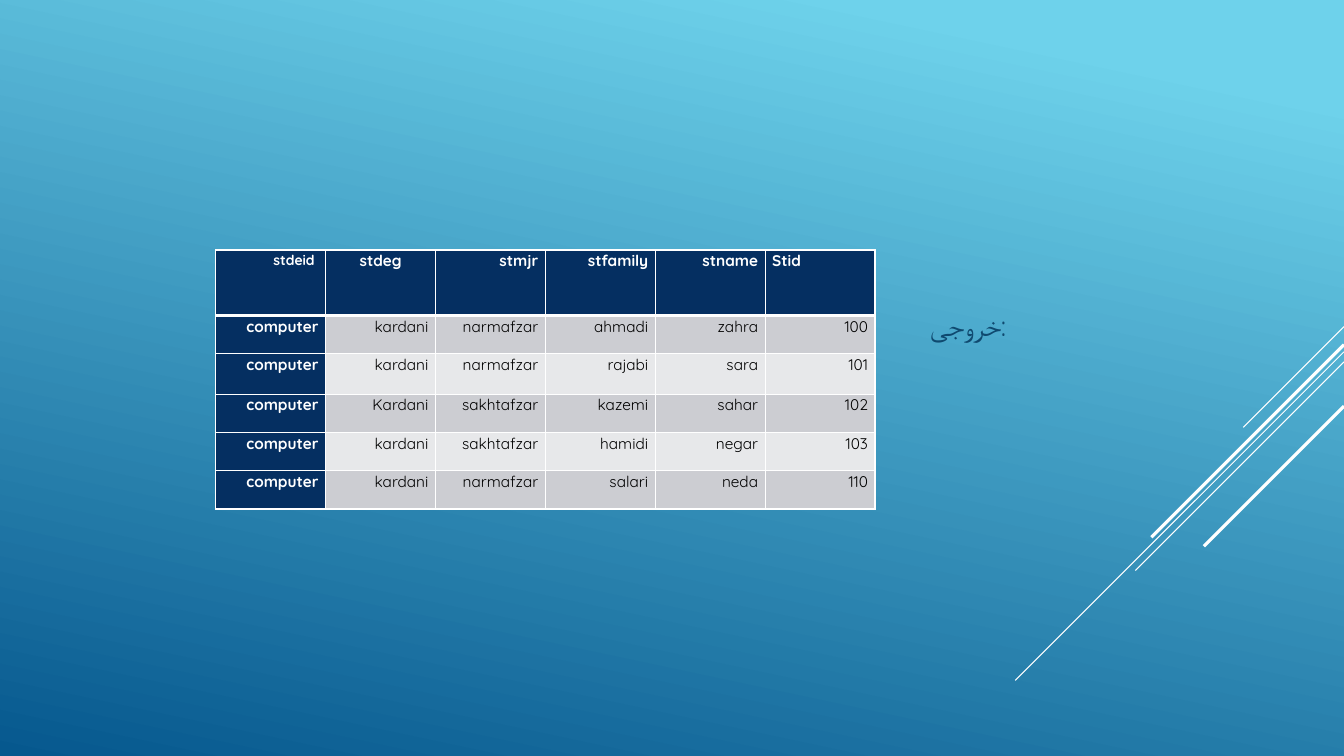
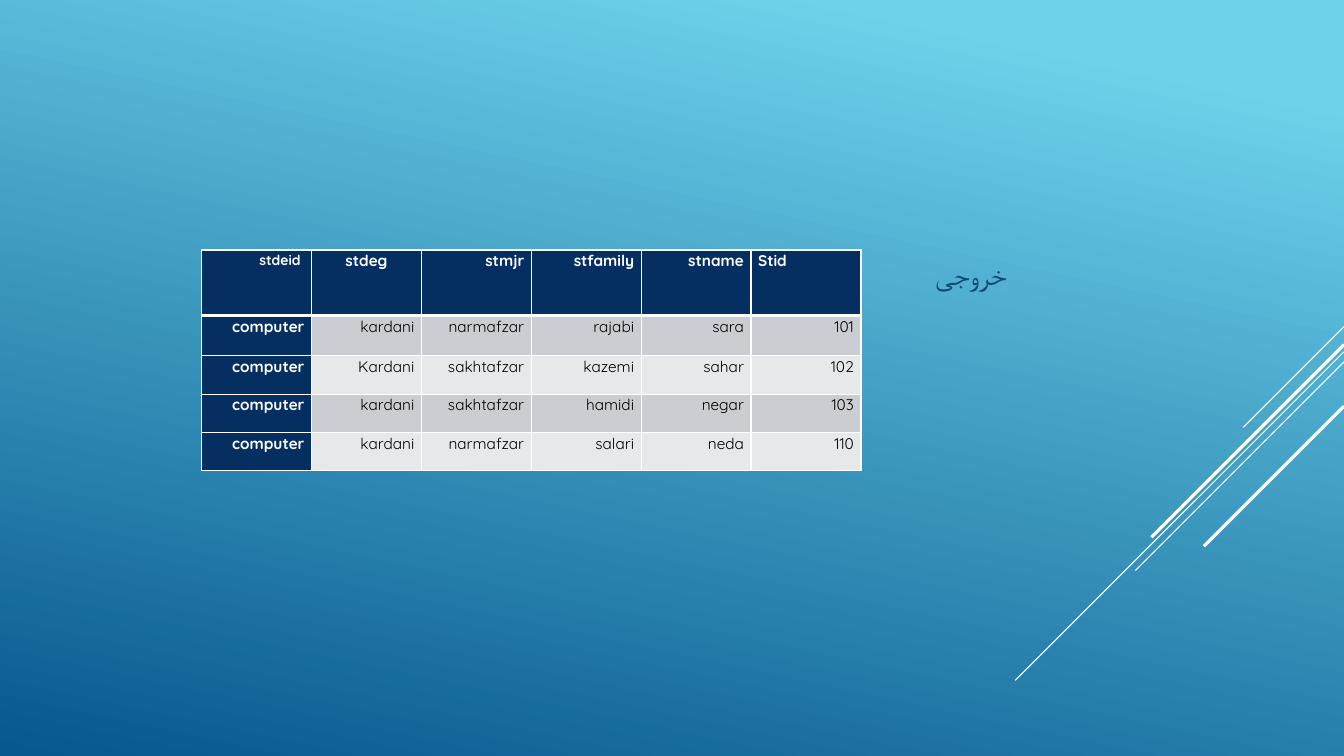
from dataclasses import dataclass

from pptx import Presentation
from pptx.dml.color import RGBColor
from pptx.enum.shapes import MSO_CONNECTOR
from pptx.enum.text import MSO_ANCHOR, PP_ALIGN
from pptx.oxml.ns import qn
from pptx.presentation import Presentation as Deck
from pptx.slide import Slide
from pptx.table import _Cell as Cell
from pptx.text.text import _Paragraph as Paragraph
from pptx.util import Inches, Pt
from lxml.etree import SubElement

FONT = "Quicksand"
COLORS = {
    "sky": "6ED2EB",
    "ocean": "06588E",
    "heading": "0F496F",
    "navy": "052F61",
    "band_dark": "CCCDD2",
    "band_light": "E7E8EA",
    "white": "FFFFFF",
    "black": "000000",
}
TABLE_TOP = 2.48
COLUMN_WIDTH = 1.09
HEADER_HEIGHT = 0.65
CELL_MARGIN = 0.07


@dataclass(frozen=True)
class Ray:
    """A diagonal line that rises to the right edge of the slide."""
    top: float
    reach: float
    weight: float


@dataclass(frozen=True)
class Column:
    name: str
    align: PP_ALIGN = PP_ALIGN.RIGHT
    size: float = 11
    margin_right: float = CELL_MARGIN


@dataclass(frozen=True)
class Student:
    values: tuple[str, ...]
    height: float = 0.38


@dataclass(frozen=True)
class ResultSlide:
    heading: str
    heading_height: float
    table_left: float
    students: list[Student]


RAYS = [
    Ray(3.24, 1.00, 0.75),
    Ray(3.49, 3.26, 0.75),
    Ray(3.59, 2.07, 0.75),
    Ray(3.42, 1.91, 2.25),
    Ray(4.03, 1.39, 2.25),
]
COLUMNS = [
    Column("stdeid", size=10, margin_right=0.11),
    Column("stdeg", PP_ALIGN.CENTER),
    Column("stmjr"),
    Column("stfamily"),
    Column("stname"),
    Column("Stid", PP_ALIGN.LEFT),
]
STUDENTS = [
    Student(("computer", "kardani", "narmafzar", "ahmadi", "zahra", "100")),
    Student(("computer", "kardani", "narmafzar", "rajabi", "sara", "101"), 0.4),
    Student(("computer", "Kardani", "sakhtafzar", "kazemi", "sahar", "102")),
    Student(("computer", "kardani", "sakhtafzar", "hamidi", "negar", "103")),
    Student(("computer", "kardani", "narmafzar", "salari", "neda", "110")),
]
RESULTS = [
    ResultSlide("خروجی:", 4.95, 2.14, STUDENTS),
    ResultSlide("خروجی", 3.95, 2.0, STUDENTS[1:]),
]


def rgb(name: str) -> RGBColor:
    return RGBColor.from_string(COLORS[name])


def style_runs(paragraph: Paragraph, size: float, color: str, bold: bool = False) -> None:
    for run in paragraph.runs:
        run.font.name = FONT
        run.font.size = Pt(size)
        run.font.bold = bold
        run.font.color.rgb = rgb(color)


def set_background(presentation: Deck) -> None:
    fill = presentation.slide_master.background.fill
    fill.gradient()
    fill.gradient_angle = 360 - 102
    for stop, position, color in zip(fill.gradient_stops, (0.1, 1.0), ("sky", "ocean")):
        stop.position = position
        stop.color.rgb = rgb(color)


def add_ray(slide: Slide, ray: Ray, right_edge: float) -> None:
    connector = slide.shapes.add_connector(
        MSO_CONNECTOR.STRAIGHT,
        Inches(right_edge), Inches(ray.top),
        Inches(right_edge - ray.reach), Inches(ray.top + ray.reach),
    )
    connector.line.color.rgb = rgb("white")
    connector.line.width = Pt(ray.weight)
    SubElement(connector._element.spPr, qn("a:effectLst"))


def format_heading(slide: Slide, text: str, height: float) -> None:
    title = slide.shapes.title
    title.left, title.top = Inches(0.75), Inches(0.75)
    title.width, title.height = Inches(9.33), Inches(height)
    title.text_frame.text = text
    title.text_frame.word_wrap = True
    title.text_frame.vertical_anchor = MSO_ANCHOR.MIDDLE
    paragraph = title.text_frame.paragraphs[0]
    paragraph.alignment = PP_ALIGN.RIGHT
    paragraph.space_after = Pt(6)
    style_runs(paragraph, 20, "heading")


def set_borders(cell: Cell, top: float, bottom: float) -> None:
    properties = cell._tc.get_or_add_tcPr()
    for side, weight in (("L", 1), ("R", 1), ("T", top), ("B", bottom)):
        line = SubElement(properties, qn(f"a:ln{side}"), w=str(Pt(weight)))
        fill = SubElement(line, qn("a:solidFill"))
        SubElement(fill, qn("a:srgbClr"), val=COLORS["white"])


def fill_cell(cell: Cell, text: str, fill: str, column: Column, is_header: bool) -> None:
    cell.fill.solid()
    cell.fill.fore_color.rgb = rgb(fill)
    cell.margin_left = Inches(CELL_MARGIN)
    cell.margin_right = Inches(column.margin_right if is_header else CELL_MARGIN)
    cell.margin_top = cell.margin_bottom = 0
    cell.text_frame.text = text
    paragraph = cell.text_frame.paragraphs[0]
    paragraph.alignment = column.align if is_header else PP_ALIGN.RIGHT
    paragraph.line_spacing = 1.07
    on_navy = fill == "navy"
    style_runs(paragraph, column.size if is_header else 11,
               "white" if on_navy else "black", on_navy)


def add_student_table(slide: Slide, left: float, students: list[Student]) -> None:
    rows = [Student(tuple(column.name for column in COLUMNS), HEADER_HEIGHT), *students]
    table = slide.shapes.add_table(
        len(rows), len(COLUMNS), Inches(left), Inches(TABLE_TOP),
        Inches(COLUMN_WIDTH * len(COLUMNS)), Inches(sum(row.height for row in rows)),
    ).table
    table.first_col = True
    for table_column in table.columns:
        table_column.width = Inches(COLUMN_WIDTH)
    for row_index, row in enumerate(rows):
        table.rows[row_index].height = Inches(row.height)
        is_header = row_index == 0
        band = "band_dark" if row_index % 2 else "band_light"
        for column_index, (column, text) in enumerate(zip(COLUMNS, row.values)):
            cell = table.cell(row_index, column_index)
            # The rule under the header is thicker than the grid
            set_borders(cell, 3 if row_index == 1 else 1, 3 if is_header else 1)
            fill = "navy" if is_header or column_index == 0 else band
            fill_cell(cell, text, fill, column, is_header)


def add_result_slide(presentation: Deck, result: ResultSlide) -> None:
    slide = presentation.slides.add_slide(presentation.slide_layouts[5])
    # Decorative rays
    for ray in RAYS:
        add_ray(slide, ray, presentation.slide_width.inches)
    # Heading and query result
    format_heading(slide, result.heading, result.heading_height)
    add_student_table(slide, result.table_left, result.students)


def main() -> None:
    presentation = Presentation()
    presentation.slide_width = Inches(13.33)
    presentation.slide_height = Inches(7.5)
    set_background(presentation)
    for result in RESULTS:
        add_result_slide(presentation, result)
    presentation.save("out.pptx")


if __name__ == "__main__":
    main()
